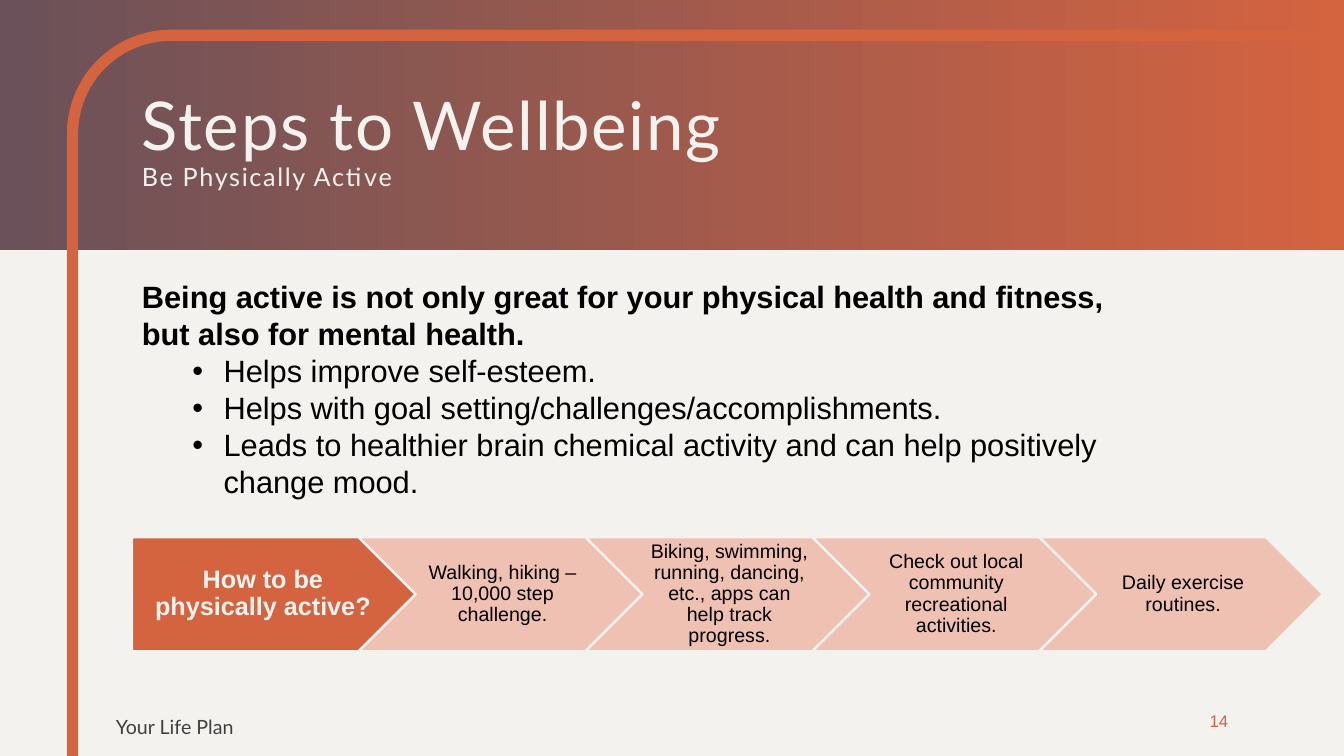
"""Build the Steps to Wellbeing slide on being physically active."""
from lxml import etree
from pptx import Presentation
from pptx.dml.color import RGBColor
from pptx.enum.shapes import MSO_SHAPE
from pptx.enum.text import MSO_ANCHOR, PP_ALIGN
from pptx.oxml.ns import qn
from pptx.util import Inches, Pt

RECTANGLE = MSO_SHAPE.RECTANGLE
ROUNDED = MSO_SHAPE.ROUNDED_RECTANGLE
PENTAGON = MSO_SHAPE.PENTAGON
CHEVRON = MSO_SHAPE.CHEVRON
LEFT, CENTER, RIGHT = PP_ALIGN.LEFT, PP_ALIGN.CENTER, PP_ALIGN.RIGHT
TOP, MIDDLE = MSO_ANCHOR.TOP, MSO_ANCHOR.MIDDLE

CREAM, ORANGE, PLUM = "F4F2EF", "D46340", "6B5159"
PEACH, BLACK, GRAY = "EEC1B3", "000000", "404040"

BENEFITS = [
    "Helps improve self-esteem.",
    "Helps with goal setting/challenges/accomplishments.",
    "Leads to healthier brain chemical activity and can help positively change mood.",
]
ACTIVITIES = [
    "Walking, hiking – 10,000 step challenge.",
    "Biking, swimming, running, dancing, etc., apps can help track progress.",
    "Check out local community recreational activities.",
    "Daily exercise routines.",
]


def color(value):
    return RGBColor.from_string(value)


class SlideBuilder:
    """Hold the slide and its style, and draw each kind of element."""

    heading_font = "Lato"
    body_font = "Arial"

    def __init__(self, presentation):
        self.slide = presentation.slides.add_slide(presentation.slide_layouts[6])
        fill = self.slide.background.fill
        fill.solid()
        fill.fore_color.rgb = color(CREAM)

    def add_shape(self, kind, left, top, width, height):
        shape = self.slide.shapes.add_shape(
            kind, Inches(left), Inches(top), Inches(width), Inches(height))
        shape.shadow.inherit = False
        return shape

    def banner(self, left, top, width, height, start, end):
        shape = self.add_shape(RECTANGLE, left, top, width, height)
        shape.fill.gradient()
        shape.fill.gradient_angle = 0
        for stop, value in zip(shape.fill.gradient_stops, (start, end)):
            stop.color.rgb = color(value)
        shape.line.fill.background()

    def frame(self, left, top, width, height, line, weight):
        shape = self.add_shape(ROUNDED, left, top, width, height)
        shape.adjustments[0] = 0.117
        shape.fill.background()
        shape.line.color.rgb = color(line)
        shape.line.width = Pt(weight)

    def style(self, paragraph, size, value, bold=False, font=None, align=LEFT):
        paragraph.alignment = align
        paragraph.font.name = font or self.body_font
        paragraph.font.size = Pt(size)
        paragraph.font.bold = bold
        paragraph.font.color.rgb = color(value)

    def text_box(self, left, top, width, height, anchor=TOP):
        box = self.slide.shapes.add_textbox(
            Inches(left), Inches(top), Inches(width), Inches(height))
        frame = box.text_frame
        frame.word_wrap = True
        frame.vertical_anchor = anchor
        return frame

    def label(self, text, left, top, width, height, size, value, anchor=TOP, **style):
        paragraph = self.text_box(left, top, width, height, anchor).paragraphs[0]
        paragraph.text = text
        self.style(paragraph, size, value, **style)

    def title(self, heading, subheading, left, top, width, height):
        paragraph = self.text_box(left, top, width, height, MIDDLE).paragraphs[0]
        paragraph.line_spacing = 0.9
        self.style(paragraph, 48, CREAM, font=self.heading_font)
        for text, size in ((heading, 48), (subheading, 18)):
            if paragraph.runs:
                paragraph.add_line_break()
            run = paragraph.add_run()
            run.text = text
            run.font.size = Pt(size)
            run.font._element.set("spc", "120")

    def bulleted_list(self, lead, items, left, top, width, height, size):
        frame = self.text_box(left, top, width, height)
        frame.text = lead
        self.style(frame.paragraphs[0], size, BLACK, bold=True)
        for item in items:
            paragraph = frame.add_paragraph()
            paragraph.text = item
            paragraph.level = 1
            properties = paragraph._p.get_or_add_pPr()
            properties.set("marL", str(Inches(0.81)))
            properties.set("indent", str(Inches(-0.31)))
            etree.SubElement(properties, qn("a:buFont")).set("typeface", self.body_font)
            etree.SubElement(properties, qn("a:buChar")).set("char", "•")
            self.style(paragraph, size, BLACK)

    def arrow(self, kind, text, left, top, width, height, fill, size, value, insets, bold=False):
        shape = self.add_shape(kind, left, top, width, height)
        shape.fill.solid()
        shape.fill.fore_color.rgb = color(fill)
        shape.line.color.rgb = color(CREAM)
        shape.line.width = Pt(1.5)
        frame = shape.text_frame
        frame.word_wrap = True
        frame.vertical_anchor = MIDDLE
        frame.margin_left, frame.margin_right = Inches(insets[0]), Inches(insets[1])
        frame.margin_top = frame.margin_bottom = Inches(insets[2])
        paragraph = frame.paragraphs[0]
        paragraph.text = text
        paragraph.line_spacing = 0.9
        self.style(paragraph, size, value, bold=bold, align=CENTER)


def main():
    presentation = Presentation()
    presentation.slide_width = Inches(13.33)
    presentation.slide_height = Inches(7.5)
    builder = SlideBuilder(presentation)

    builder.banner(0, 0, 13.33, 2.48, PLUM, ORANGE)
    builder.frame(0.72, 0.35, 14.2, 8.35, ORANGE, 8)
    builder.title("Steps to Wellbeing", "Be Physically Active", 1.31, 0.62, 11.3, 1.58)
    builder.bulleted_list(
        "Being active is not only great for your physical health and fitness, "
        "but also for mental health.", BENEFITS, 1.31, 2.71, 10.06, 2.32, 22)

    left, top, width, height, step = 1.31, 5.33, 2.81, 1.13, 2.25
    builder.arrow(PENTAGON, "How to be physically active?", left, top, width, height,
                  ORANGE, 18, CREAM, (0.1, 0.03, 0.05), bold=True)
    for index, activity in enumerate(ACTIVITIES, start=1):
        builder.arrow(CHEVRON, activity, left + index * step, top, width, height,
                      PEACH, 14, BLACK, (0.06, 0.02, 0.04))

    builder.label("Your Life Plan", 1.05, 7.04, 3.54, 0.4, 14, GRAY,
                  font=builder.heading_font)
    builder.label("14", 11.26, 6.95, 1.02, 0.4, 12, ORANGE, MIDDLE, align=RIGHT)
    presentation.save("out.pptx")


if __name__ == "__main__":
    main()
